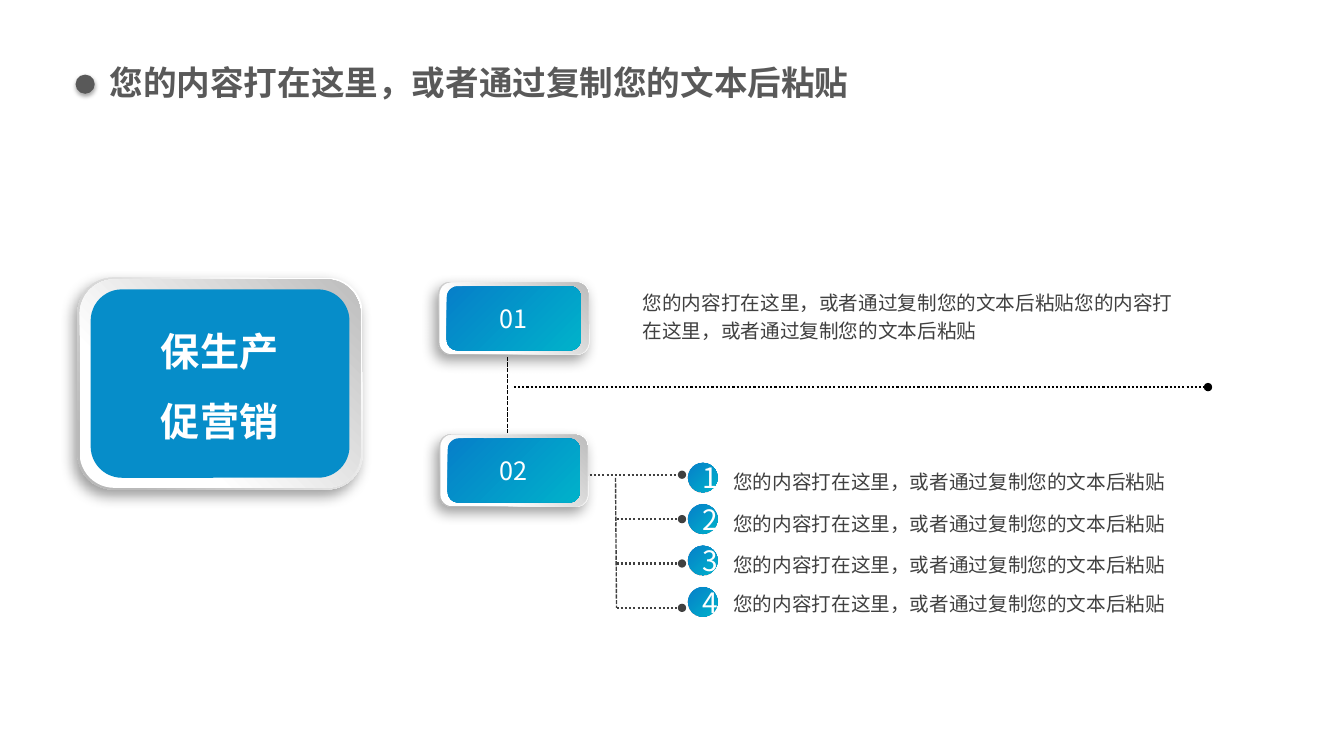
from lxml.etree import SubElement as Sub
from pptx import Presentation
from pptx.dml.color import RGBColor as Rgb
from pptx.enum.dml import MSO_LINE as Dash
from pptx.enum.shapes import MSO_CONNECTOR as Con, MSO_SHAPE as Kind
from pptx.enum.text import MSO_ANCHOR as Anchor, MSO_AUTO_SIZE as Auto, PP_ALIGN as Align
from pptx.oxml.ns import qn
from pptx.util import Pt

HUES = {"black": "000000", "white": "FFFFFF", "dark": "404040", "title": "595959",
        "face": "068DC9", "blue": "067FC9", "teal": "00B2CA",
        "pale": "F2F2F2", "mid": "BFBFBF", "grey": "B8B8B8", "deep": "A6A6A6"}
FONT = "Noto Sans CJK SC"
BLUES = [(0, "blue"), (100, "teal")]
OUTER = [(17, "white"), (88, "grey")]
INNER = [(29, "white"), (98, "mid")]
RING = [(0, "white"), (55, "pale"), (100, "deep")]
LINE = "您的内容打在这里，或者通过复制您的文本后粘贴"


class Deck:
    """Draws the elements of one slide in a shared style, in points."""

    def __init__(self, wide, high):
        self.prs = Presentation()
        self.prs.slide_width, self.prs.slide_height = Pt(wide), Pt(high)
        self.slide = self.prs.slides.add_slide(self.prs.slide_layouts[6])
        self.items = self.slide.shapes

    def style(self, frame, text, size, hue, font=FONT, bold=False, align=None, gap=None):
        frame.word_wrap = True
        frame.text = text
        for para in frame.paragraphs:
            para.alignment = align
            if gap:
                para.line_spacing = gap
            for run in para.runs:
                run.font.size, run.font.bold, run.font.name = Pt(size), bold, font
                run.font.color.rgb = Rgb.from_string(HUES[hue])
                Sub(run._r.get_or_add_rPr(), qn("a:ea"), typeface=font)

    def text(self, x, y, w, h, text, size=14, hue="dark", gap=Pt(19.8), **look):
        frame = self.items.add_textbox(Pt(x), Pt(y), Pt(w), Pt(h)).text_frame
        self.style(frame, text, size, hue, gap=gap, **look)
        frame.auto_size = Auto.SHAPE_TO_FIT_TEXT

    def shape(self, kind, x, y, w, h, fill, angle=45, turn=0):
        item = self.items.add_shape(kind, Pt(x), Pt(y), Pt(w), Pt(h))
        item.shadow.inherit = False
        item.line.fill.background()
        item.rotation = turn
        if isinstance(fill, str):
            item.fill.solid()
            item.fill.fore_color.rgb = Rgb.from_string(HUES[fill])
            return item
        item.fill.gradient()
        item.fill.gradient_angle = 360 - angle
        stops = item._element.spPr.find(".//" + qn("a:gsLst"))
        stops.clear()
        for pos, hue in fill:
            stop = Sub(stops, qn("a:gs"), pos=str(pos * 1000))
            Sub(stop, qn("a:srgbClr"), val=HUES[hue])
        return item

    def label(self, item, text, size):
        self.style(item.text_frame, text, size, "white", align=Align.CENTER)
        item.text_frame.vertical_anchor = Anchor.MIDDLE

    def shade(self, item, alpha, blur, dist, angle):
        effects = item._element.spPr.find(qn("a:effectLst"))
        cast = Sub(effects, qn("a:outerShdw"), blurRad=str(int(Pt(blur))),
                   dist=str(int(Pt(dist))), dir=str(angle * 60000),
                   algn="ctr", rotWithShape="0")
        tint = Sub(cast, qn("a:srgbClr"), val=HUES["black"])
        Sub(tint, qn("a:alpha"), val=str(alpha * 1000))

    def line(self, x, y, x2, y2, hue, width, dash, dot=False):
        item = self.items.add_connector(Con.STRAIGHT, Pt(x), Pt(y), Pt(x2), Pt(y2))
        item.line.color.rgb = Rgb.from_string(HUES[hue])
        item.line.width, item.line.dash_style = Pt(width), dash
        if dot:
            Sub(item._element.spPr.find(qn("a:ln")), qn("a:tailEnd"), type="oval")
        Sub(item._element.spPr, qn("a:effectLst"))

    def plate(self, cx, cy, w, h, wide, high, fill):
        for scale, stops, turn in ((1, OUTER, 90), (.985, INNER, 270)):
            a, b = h * scale, w * scale
            item = self.shape(Kind.ROUNDED_RECTANGLE, cx - a / 2, cy - b / 2, a, b,
                              stops, turn=turn)
            if turn == 90:
                self.shade(item, 39, 10, 5, 123)
        return self.shape(Kind.ROUNDED_RECTANGLE, cx - wide / 2, cy - high / 2,
                          wide, high, fill)

    def badge(self, x, y, text):
        self.shape(Kind.DONUT, x, y, 21.6, 21.6, RING, 135).adjustments[0] = .05
        self.label(self.shape(Kind.OVAL, x + .2, y + .3, 21, 21, BLUES), text, 20)


def main():
    deck = Deck(960.5, 540)
    for i in range(4):
        y = 339.1 + 31.7 * i
        deck.line(440.6 if i else 397.4, y, 487.4, y, "dark", 1.5, Dash.ROUND_DOT, True)
    deck.line(439.9, 341.3, 440.6, 434.2, "dark", 1, Dash.SQUARE_DOT)
    deck.line(362.9, 231.1, 362.9, 336.2, "black", 1, Dash.SQUARE_DOT)
    deck.line(367.2, 276.5, 863.3, 276.5, "black", 1.5, Dash.ROUND_DOT, True)
    deck.text(452.2, 201.6, 406.8, 46.1, LINE * 2)

    for text, y, wide in (("01", 227.4, 108), ("02", 336.1, 106.6)):
        deck.label(deck.plate(367.2, y, wide, 51.8, wide - 12.2, 45.7, BLUES), text, 18)
    deck.plate(157.3, 274, 203.8, 151.2, 185, 134.6, "face")

    for i, y in enumerate((329, 359.3, 388.1, 416.2)):
        deck.badge(491.6, 330.3 + 29.6 * i, str(i + 1))
        deck.text(517, y, 399.6, 27.4, LINE)

    deck.text(90.7, 213.1, 132.5, 108.7, "保生产\n促营销", 28, "white", 1.5,
              font="TeX Gyre Adventor", bold=True, align=Align.CENTER)
    deck.text(71.3, 41, 641.5, 36, LINE, 24, "title", None, bold=True)
    deck.shade(deck.shape(Kind.OVAL, 54, 53.3, 13.7, 13.7, "title"), 35, 3.1, 1.8, 90)
    deck.prs.save("out.pptx")


if __name__ == "__main__":
    main()
